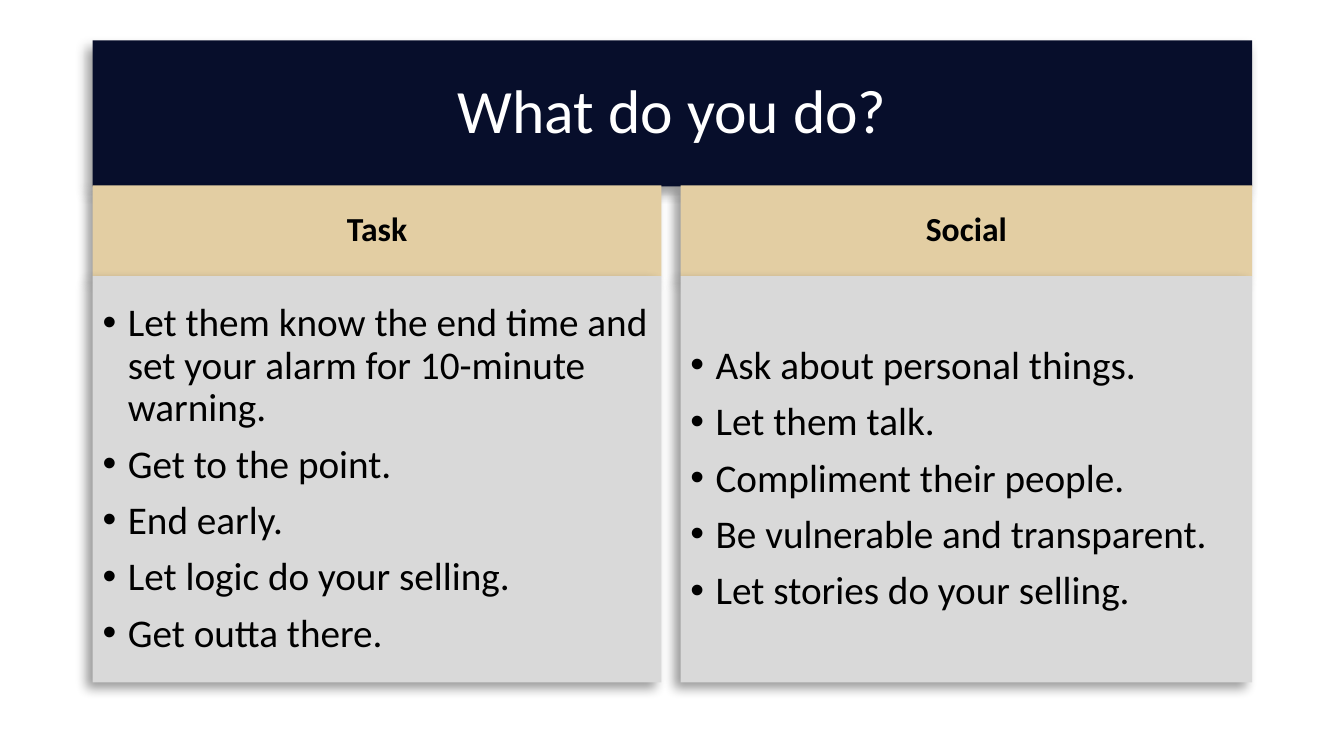
from lxml.etree import SubElement
from pptx import Presentation
from pptx.dml.color import RGBColor
from pptx.enum.shapes import MSO_SHAPE
from pptx.enum.text import MSO_ANCHOR, PP_ALIGN
from pptx.oxml.ns import qn
from pptx.util import Inches, Pt

NAVY = RGBColor(0x07, 0x0E, 0x2B)
SAND = RGBColor(0xE3, 0xCE, 0xA3)
GREY = RGBColor(0xD9, 0xD9, 0xD9)
BLACK = RGBColor(0, 0, 0)
WHITE = RGBColor(0xFF, 0xFF, 0xFF)

COLUMNS = [
    (0.92, 5.64, "Task", [
        "Let them know the end time and set your alarm for 10-minute warning.",
        "Get to the point.",
        "End early.",
        "Let logic do your selling.",
        "Get outta there.",
    ]),
    (6.75, 5.67, "Social", [
        "Ask about personal things.",
        "Let them talk.",
        "Compliment their people.",
        "Be vulnerable and transparent.",
        "Let stories do your selling.",
    ]),
]


class Deck:
    font = "Calibri"

    def __init__(self, slide):
        self.slide = slide

    def panel(self, left, top, width, height, fill):
        """Add a filled, shadowed box and return its text frame."""
        box = self.slide.shapes.add_shape(
            MSO_SHAPE.RECTANGLE,
            Inches(left), Inches(top), Inches(width), Inches(height))
        box.fill.solid()
        box.fill.fore_color.rgb = fill
        box.line.fill.background()
        self.shade(box)
        frame = box.text_frame
        frame.word_wrap = True
        frame.vertical_anchor = MSO_ANCHOR.MIDDLE
        return frame

    def shade(self, box):
        """Cast a soft shadow to the lower left."""
        box.shadow.inherit = False
        effects = box._element.spPr.find(qn("a:effectLst"))
        cast = SubElement(effects, qn("a:outerShdw"), blurRad=str(Pt(8)),
                          dist=str(Pt(6)), dir=str(135 * 60000),
                          algn="tr", rotWithShape="0")
        color = SubElement(cast, qn("a:srgbClr"), val=str(BLACK))
        SubElement(color, qn("a:alpha"), val="40000")

    def label(self, para, text, size, color, bold=False, before=10):
        """Fill a paragraph with one styled run."""
        para.line_spacing = 0.9
        para.space_before = Pt(before)
        run = para.add_run()
        run.text = text
        run.font.name = self.font
        run.font.size = Pt(size)
        run.font.bold = bold
        run.font.color.rgb = color

    def heading(self, frame, text, size, color, **style):
        para = frame.paragraphs[0]
        para.alignment = PP_ALIGN.CENTER
        self.label(para, text, size, color, **style)

    def bullets(self, frame, items):
        for i, item in enumerate(items):
            para = frame.add_paragraph() if i else frame.paragraphs[0]
            para.alignment = PP_ALIGN.LEFT
            self.label(para, item, 28, BLACK)
            props = para._p.get_or_add_pPr()
            props.set("marL", str(Inches(0.25)))
            props.set("indent", str(Inches(-0.25)))
            SubElement(props, qn("a:buFont"), typeface="Arial")
            SubElement(props, qn("a:buChar"), char="•")


def main():
    show = Presentation()
    show.slide_width = Inches(13.33)
    show.slide_height = Inches(7.5)
    deck = Deck(show.slides.add_slide(show.slide_layouts[6]))

    title = deck.panel(0.92, 0.4, 11.5, 1.45, NAVY)
    deck.heading(title, "What do you do?", 44, WHITE, before=0)
    for left, width, name, items in COLUMNS:
        head = deck.panel(left, 1.84, width, 0.9, SAND)
        deck.heading(head, name, 24, BLACK, bold=True)
        body = deck.panel(left, 2.74, width, 4.03, GREY)
        deck.bullets(body, items)

    show.save("out.pptx")


if __name__ == "__main__":
    main()
